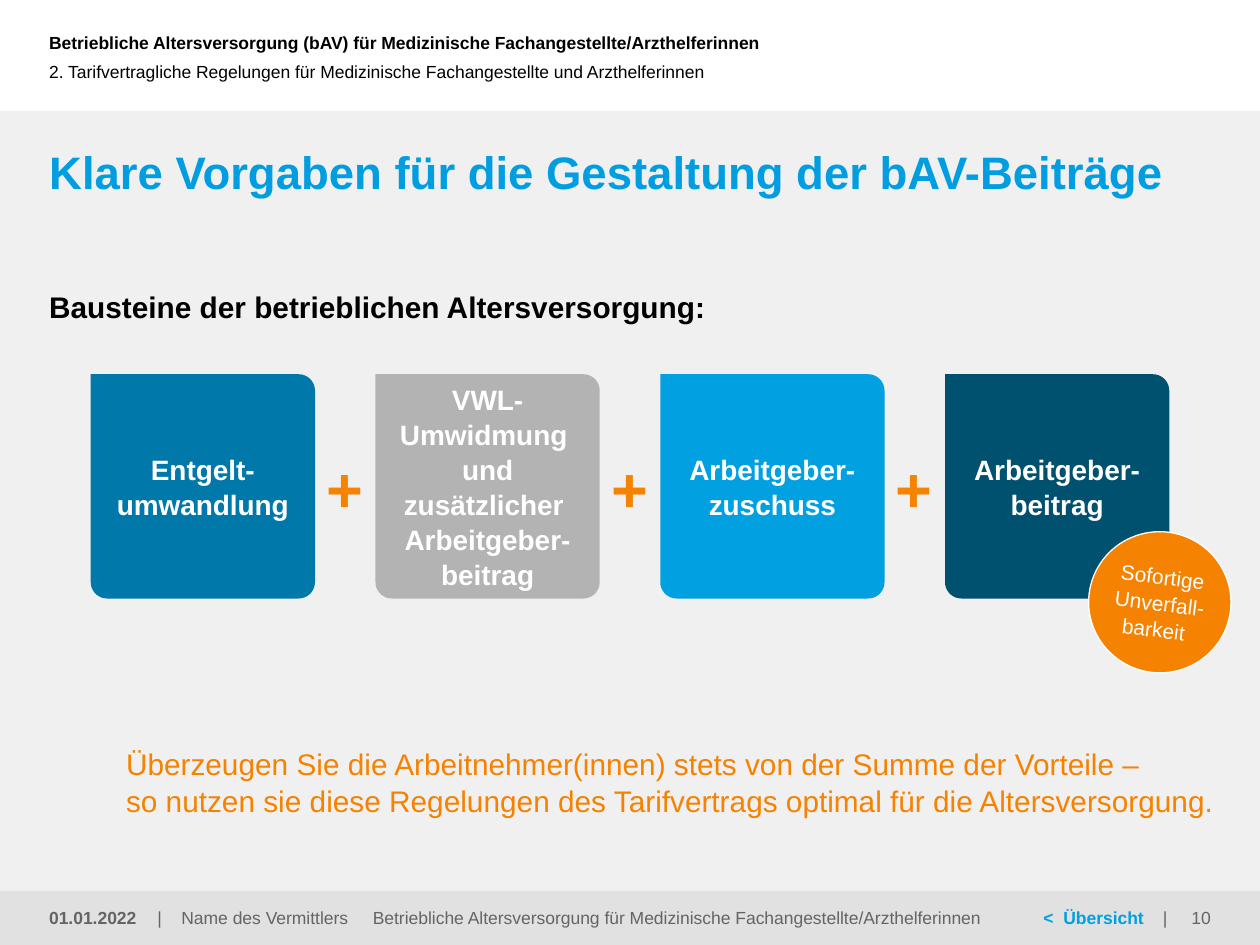
from math import cos, radians, sin

from lxml.etree import SubElement
from pptx import Presentation
from pptx.dml.color import RGBColor
from pptx.enum.shapes import MSO_SHAPE as Shape
from pptx.enum.text import MSO_ANCHOR as Anchor, PP_ALIGN as Align
from pptx.oxml.ns import qn
from pptx.util import Inches, Pt

BLACK, WHITE, GREY = "000000", "FFFFFF", "646464"
ORANGE, BLUE = "F58200", "00A0E1"
CARD_SIZE, CARD_TOP, CARD_STEP, CORNER = 1.78, 2.97, 2.26, 0.13
FOOTER_TOP, FOOTER_HEIGHT = 7.07, 0.43


def color(value):
    return RGBColor.from_string(value)


def style_font(font, size, fill, bold=False):
    font.name = "Arial"
    font.size = Pt(size)
    font.bold = bold
    font.color.rgb = color(fill)


def paint(shape, fill, line=None):
    shape.shadow.inherit = False
    shape.fill.solid()
    shape.fill.fore_color.rgb = color(fill)
    if line:
        shape.line.color.rgb = color(line)
        shape.line.width = Pt(0.75)
    else:
        shape.line.fill.background()


def set_frame(shape, anchor=Anchor.MIDDLE, insets=(0, 0, 0, 0)):
    frame = shape.text_frame
    frame.word_wrap = True
    frame.vertical_anchor = anchor
    (frame.margin_left, frame.margin_top,
     frame.margin_right, frame.margin_bottom) = map(Inches, insets)
    return frame


def write(frame, lines, size, fill, bold=False, align=Align.LEFT, spacing=1.0):
    for index, line in enumerate(lines):
        para = frame.add_paragraph() if index else frame.paragraphs[0]
        para.text = line
        para.alignment = align
        para.line_spacing = spacing
        style_font(para.font, size, fill, bold)


def add_text(page, area, text, size, fill, bold=False, align=Align.LEFT,
             anchor=Anchor.MIDDLE, spacing=1.0):
    box = page.shapes.add_textbox(*map(Inches, area))
    write(set_frame(box, anchor), [text], size, fill, bold, align, spacing)


def add_tabbed(page, area, spans, stops):
    """Line of (text, fill, bold) spans with tab stops in inches."""
    box = page.shapes.add_textbox(*map(Inches, area))
    para = set_frame(box).paragraphs[0]
    tabs = SubElement(para._p.get_or_add_pPr(), qn("a:tabLst"))
    for stop in stops:
        SubElement(tabs, qn("a:tab"), pos=str(Inches(stop)), algn="l")
    for text, fill, bold in spans:
        span = para.add_run()
        span.text = text
        style_font(span.font, 10, fill, bold)


def add_band(page, top, height, fill):
    band = page.shapes.add_shape(
        Shape.RECTANGLE, 0, Inches(top), Inches(10), Inches(height))
    paint(band, fill)


def add_card(page, left, fill, lines, inset):
    """Square with three rounded corners and a sharp top left one."""
    right, bottom = left + CARD_SIZE, CARD_TOP + CARD_SIZE
    centers = [
        (right - CORNER, CARD_TOP + CORNER, -90),
        (right - CORNER, bottom - CORNER, 0),
        (left + CORNER, bottom - CORNER, 90),
    ]
    points = [
        (Inches(x + CORNER * cos(radians(start + turn))),
         Inches(y + CORNER * sin(radians(start + turn))))
        for x, y, start in centers for turn in range(0, 91, 10)
    ]
    builder = page.shapes.build_freeform(Inches(left), Inches(CARD_TOP))
    builder.add_line_segments(points, close=True)
    card = builder.convert_to_shape()
    paint(card, fill)
    frame = set_frame(card, insets=(inset,) * 4)
    write(frame, lines, 16, WHITE, True, Align.CENTER, 1.04)


def add_badge(page):
    badge = page.shapes.add_shape(
        Shape.OVAL, Inches(8.64), Inches(4.22), Inches(1.13), Inches(1.12))
    paint(badge, ORANGE, WHITE)
    badge.rotation = 7
    write(set_frame(badge), ["Sofortige Unverfall-barkeit "], 12, WHITE,
          align=Align.CENTER, spacing=1.05)


def add_footer(page):
    def area(left, width):
        return left, FOOTER_TOP, width, FOOTER_HEIGHT

    add_text(page, area(0.39, 0.8), "01.01.2022", 10, GREY, True)
    add_tabbed(page, area(1.25, 1.6),
               [("|\tName des Vermittlers", GREY, False)], [0.19])
    add_text(page, area(2.77, 5.2),
             "Betriebliche Altersversorgung für Medizinische "
             "Fachangestellte/Arzthelferinnen", 10, GREY, align=Align.CENTER)
    add_tabbed(page, area(8.28, 1.05),
               [("<\tÜbersicht", BLUE, True), ("\t|", GREY, False)],
               [0.16, 0.95])
    add_text(page, area(9.36, 0.25), "10", 10, GREY, align=Align.RIGHT)


def main():
    deck = Presentation()
    deck.slide_width, deck.slide_height = Inches(10), Inches(7.5)
    page = deck.slides.add_slide(deck.slide_layouts[6])

    # Background bands
    add_band(page, 0.88, 6.62, "F0F0F0")
    add_band(page, FOOTER_TOP, FOOTER_HEIGHT, "E1E1E1")

    # Header and title
    add_text(page, (0.39, 0, 6.6, 0.67),
             "Betriebliche Altersversorgung (bAV) für Medizinische "
             "Fachangestellte/Arzthelferinnen", 10, BLACK, True)
    add_text(page, (0.39, 0.25, 6.76, 0.63),
             "2. Tarifvertragliche Regelungen für Medizinische "
             "Fachangestellte und Arzthelferinnen", 10, BLACK)
    add_text(page, (0.39, 1.14, 9.22, 0.55),
             "Klare Vorgaben für die Gestaltung der bAV-Beiträge",
             26, "009EE0", True, anchor=Anchor.TOP)
    add_text(page, (0.39, 2.28, 9.22, 0.29),
             "Bausteine der betrieblichen Altersversorgung:",
             17, BLACK, True, anchor=Anchor.TOP, spacing=1.05)

    # Building blocks joined by plus signs
    cards = [
        ("0078A9", ["Entgelt-\vumwandlung"], 0.08),
        ("B3B3B3", ["VWL-Umwidmung ", "und zusätzlicher ",
                    "Arbeitgeber-beitrag"], 0.1),
        (BLUE, ["Arbeitgeber-\vzuschuss"], 0.08),
        ("005070", ["Arbeitgeber-\vbeitrag"], 0.08),
    ]
    for index, (fill, lines, inset) in enumerate(cards):
        left = 0.72 + index * CARD_STEP
        add_card(page, left, fill, lines, inset)
        if index < len(cards) - 1:
            add_text(page, (left + 1.84, 3.51, 0.35, 0.71), "+",
                     36, ORANGE, True, Align.CENTER)
    add_badge(page)

    # Closing message
    add_text(page, (1, 5.9, 8.72, 0.6),
             "Überzeugen Sie die Arbeitnehmer(innen) stets von der Summe "
             "der Vorteile – \vso nutzen sie diese Regelungen des "
             "Tarifvertrags optimal für die Altersversorgung.",
             17, ORANGE, spacing=1.05)

    add_footer(page)
    deck.save("out.pptx")


if __name__ == "__main__":
    main()
